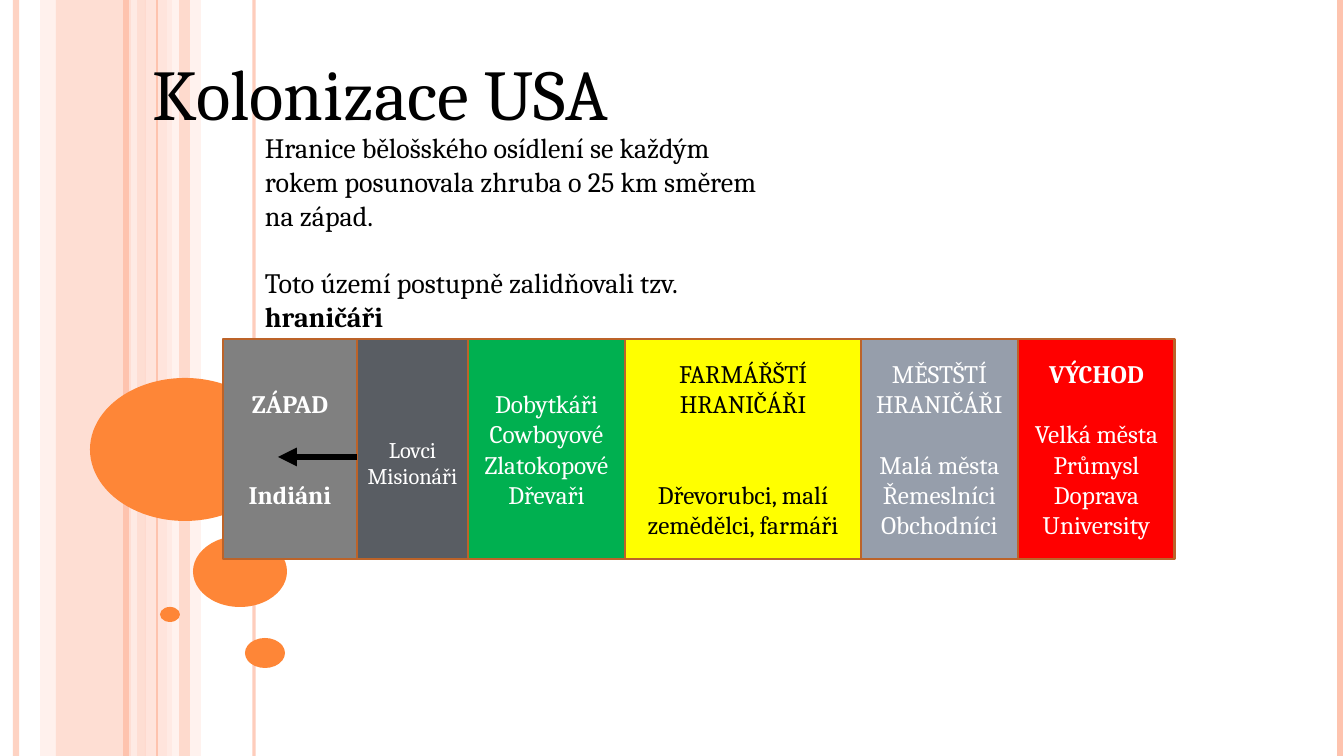
"""Build the slide on the settlement of the USA with its six frontier zones."""
from lxml.etree import SubElement
from pptx import Presentation
from pptx.dml.color import RGBColor
from pptx.enum.shapes import MSO_CONNECTOR, MSO_SHAPE
from pptx.enum.text import MSO_ANCHOR, MSO_AUTO_SIZE, PP_ALIGN
from pptx.oxml.ns import qn
from pptx.util import Pt

PX = 914400 / 100.8
WIDTH, HEIGHT = 1344, 756
FONT = "Cambria"
LINE_HEIGHT = 1.2

BLACK = RGBColor(0x00, 0x00, 0x00)
WHITE = RGBColor(0xFF, 0xFF, 0xFF)
SALMON = RGBColor(0xFE, 0xC3, 0xAE)
PEACH = RGBColor(0xFF, 0xD9, 0xCE)
CREAM = RGBColor(0xFF, 0xED, 0xE8)
ORANGE = RGBColor(0xFE, 0x86, 0x37)
BROWN = RGBColor(0xBC, 0x63, 0x29)
GREY = RGBColor(0x80, 0x80, 0x80)
SLATE = RGBColor(0x59, 0x5D, 0x63)
GREEN = RGBColor(0x00, 0xB0, 0x50)
YELLOW = RGBColor(0xFF, 0xFF, 0x00)
STEEL = RGBColor(0x96, 0x9E, 0xAB)
RED = RGBColor(0xFF, 0x00, 0x00)


def px(*lengths):
    return [round(length * PX) for length in lengths]


def write(frame, text, size=18, color=WHITE, bold=False,
          align=PP_ALIGN.CENTER, skipped=0, joined=False):
    paragraph = frame.paragraphs[-1]
    if paragraph.runs and not joined:
        paragraph = frame.add_paragraph()
    paragraph.alignment = align
    if skipped:
        paragraph.space_before = Pt(round(skipped * size * LINE_HEIGHT, 1))
    run = paragraph.add_run()
    run.text = text
    run.font.name = FONT
    run.font.size = Pt(size)
    run.font.bold = bold
    run.font.color.rgb = color


prs = Presentation()
prs.slide_width, prs.slide_height = px(WIDTH, HEIGHT)
slide = prs.slides.add_slide(prs.slide_layouts[5])
shapes = slide.shapes

bands = [
    (56, 90, SALMON, 54),
    (40, 16, PEACH, 36),
    (145, 27, PEACH, 70),
    (167, 34, CREAM, 71),
    (179, 11, SALMON, 51),
]
for left, width, color, opacity in bands:
    band = shapes.add_shape(MSO_SHAPE.RECTANGLE, *px(left, 0, width, HEIGHT))
    band.shadow.inherit = False
    band.fill.solid()
    band.fill.fore_color.rgb = color
    band.line.fill.background()
    tint = next(band._element.spPr.iter(qn("a:srgbClr")))
    SubElement(tint, qn("a:alpha"), val=str(opacity * 1000))

stripes = [
    (16, SALMON, 4.5, 73),
    (134, CREAM, 4.5, 83),
    (126, SALMON, 4.5, 100),
    (254, SALMON, 2.25, 82),
    (157, SALMON, 0.75, 100),
    (1340, SALMON, 4.5, 100),
]
for x, color, weight, opacity in stripes:
    stripe = shapes.add_connector(MSO_CONNECTOR.STRAIGHT, *px(x, 0, x, HEIGHT))
    stripe.line.color.rgb = color
    stripe.line.width = Pt(weight)
    tint = next(stripe._element.spPr.iter(qn("a:srgbClr")))
    SubElement(tint, qn("a:alpha"), val=str(opacity * 1000))
    SubElement(stripe._element.spPr, qn("a:effectLst"))

bubbles = [
    (90, 378, 190, 143),
    (193, 536, 94, 71),
    (160, 607, 20, 15),
    (245, 638, 40, 30),
]
for bounds in bubbles:
    bubble = shapes.add_shape(MSO_SHAPE.OVAL, *px(*bounds))
    bubble.shadow.inherit = False
    bubble.fill.solid()
    bubble.fill.fore_color.rgb = ORANGE
    bubble.line.fill.background()

intro = shapes.add_textbox(*px(255, 126, 515, 214)).text_frame
intro.word_wrap = True
intro_format = dict(size=20, color=BLACK, align=PP_ALIGN.LEFT)
write(intro, "Hranice bělošského osídlení se každým rokem posunovala "
      "zhruba o 25 km směrem na západ.", **intro_format)
write(intro, "Toto území postupně zalidňovali tzv. ", skipped=1, **intro_format)
write(intro, "hraničáři", bold=True, joined=True, **intro_format)

ZONE_TOP, ZONE_HEIGHT = 339, 220
BOLD = dict(bold=True)
SMALL = dict(size=16)
DARK = dict(color=BLACK)
zones = [
    (134, GREY, 5, [("ZÁPAD", BOLD), ("Indiáni", dict(bold=True, skipped=2))]),
    (111, SLATE, 32, [("Lovci", SMALL), ("Misionáři", SMALL)]),
    (157, GREEN, 5, [("Dobytkáři", {}), ("Cowboyové", {}),
                     ("Zlatokopové", {}), ("Dřevaři", {})]),
    (236, YELLOW, 5, [("FARMÁŘŠTÍ HRANIČÁŘI", DARK),
                      ("Dřevorubci, malí zemědělci, farmáři",
                       dict(color=BLACK, skipped=2))]),
    (157, STEEL, 5, [("MĚSTŠTÍ HRANIČÁŘI", {}), ("Malá města", dict(skipped=1)),
                     ("Řemeslníci", {}), ("Obchodníci", {})]),
    (157, RED, 5, [("VÝCHOD", BOLD), ("Velká města", dict(skipped=1)),
                   ("Průmysl", {}), ("Doprava", {}), ("University", {})]),
]
right = 1175
for width, color, top_margin, entries in reversed(zones):
    right -= width
    zone = shapes.add_shape(MSO_SHAPE.RECTANGLE,
                            *px(right, ZONE_TOP, width, ZONE_HEIGHT))
    zone.shadow.inherit = False
    zone.fill.solid()
    zone.fill.fore_color.rgb = color
    zone.line.color.rgb = BROWN
    zone.line.width = Pt(2)
    label = zone.text_frame
    label.word_wrap = True
    label.vertical_anchor = MSO_ANCHOR.MIDDLE
    label.margin_top, = px(top_margin)
    for text, text_format in entries:
        write(label, text, **text_format)

westward = shapes.add_connector(MSO_CONNECTOR.STRAIGHT, *px(357, 457, 278, 457))
westward.line.color.rgb = BLACK
westward.line.width = Pt(4.5)
SubElement(westward.line._get_or_add_ln(), qn("a:tailEnd"), type="triangle")
SubElement(westward._element.spPr, qn("a:effectLst"))

title = shapes.title
title.left, title.top, title.width, title.height = px(85, 40, 591, 99)
heading = title.text_frame
heading.word_wrap = True
heading.auto_size = MSO_AUTO_SIZE.NONE
heading.vertical_anchor = MSO_ANCHOR.BOTTOM
write(heading, "Kolonizace USA", size=51, color=BLACK)
heading.paragraphs[0].line_spacing = 0.8
shapes._spTree.append(title._element)

prs.save("out.pptx")
